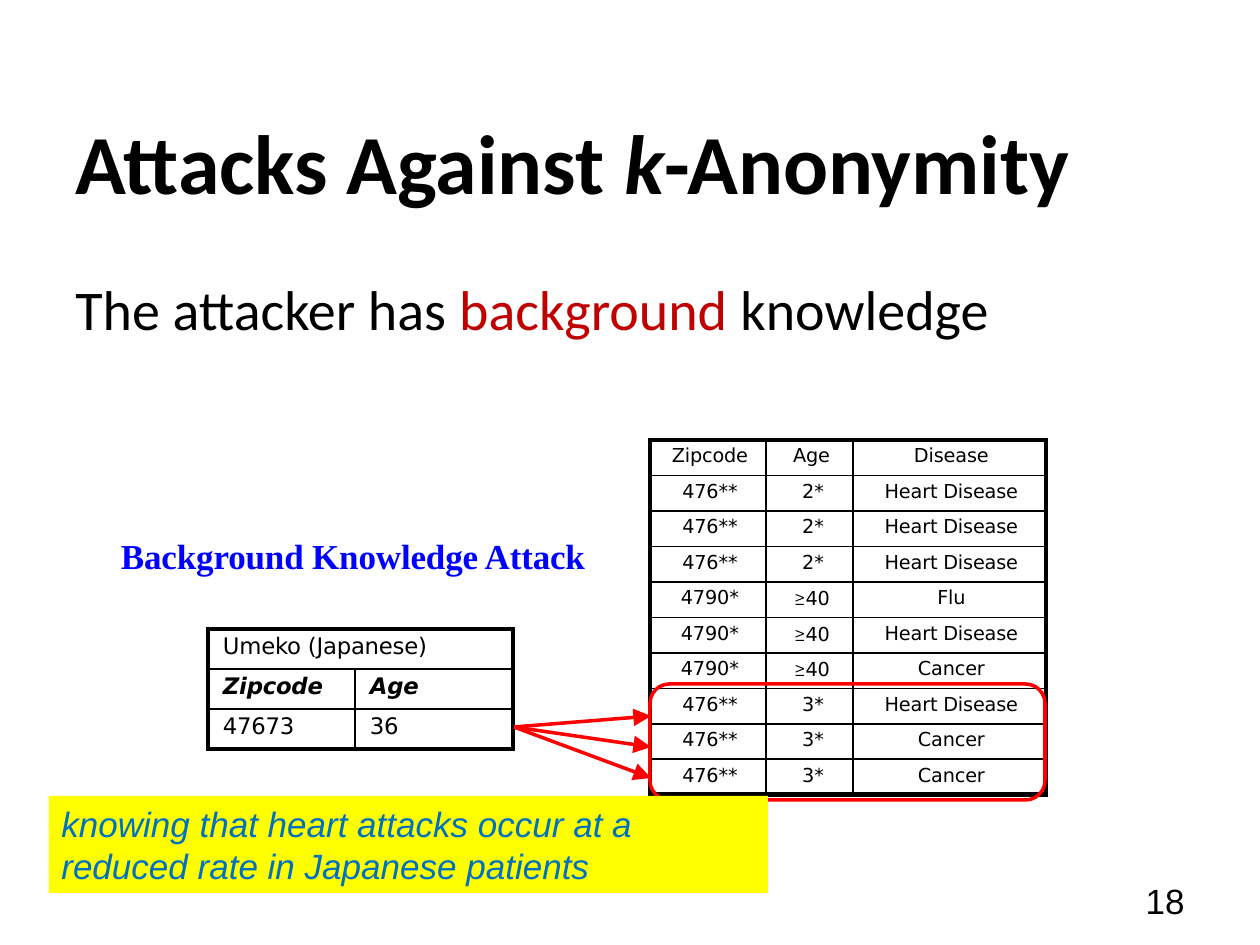
"""Build the slide on background knowledge attacks against k-anonymity."""
from lxml import etree
from pptx import Presentation
from pptx.dml.color import RGBColor
from pptx.enum.shapes import MSO_CONNECTOR, MSO_SHAPE
from pptx.enum.text import MSO_ANCHOR, PP_ALIGN
from pptx.oxml.ns import qn
from pptx.util import Emu, Pt

LEFT, CENTER, RIGHT = PP_ALIGN.LEFT, PP_ALIGN.CENTER, PP_ALIGN.RIGHT
TOP, MIDDLE = MSO_ANCHOR.TOP, MSO_ANCHOR.MIDDLE
STRAIGHT = MSO_CONNECTOR.STRAIGHT
RECT, ROUNDED = MSO_SHAPE.RECTANGLE, MSO_SHAPE.ROUNDED_RECTANGLE
BLACK, RED, BLUE, YELLOW = "000000", "FF0000", "0000FF", "FFFF00"

TITLE = [("Attacks Against ", {}), ("k", {"italic": True}), ("-Anonymity", {})]
BODY = [("The attacker has ", {}), ("background ", {"color": "C00000"}), ("knowledge", {})]
NOTE = "knowing that heart attacks occur at a reduced rate in Japanese patients"

PATIENTS = [
    ("Zipcode", "Age", "Disease"),
    ("476**", "2*", "Heart Disease"),
    ("476**", "2*", "Heart Disease"),
    ("476**", "2*", "Heart Disease"),
    ("4790*", "≥40", "Flu"),
    ("4790*", "≥40", "Heart Disease"),
    ("4790*", "≥40", "Cancer"),
    ("476**", "3*", "Heart Disease"),
    ("476**", "3*", "Cancer"),
    ("476**", "3*", "Cancer"),
]
PATIENT_ROW_LINES = [2.25] + [1] * 7 + [1.5, 1.5, 3]
PATIENT_COL_LINES = [2.25, 1, 1, 2.25]
VICTIM = [("Umeko (Japanese)", ""), ("Zipcode", "Age"), ("47673", "36")]
VICTIM_ROW_LINES = [2.25, 1.5, 1, 2.25]
VICTIM_COL_LINES = [2.25, 1, 2.25]
ARROW_START = (514, 727)
ARROW_ENDS = [(651, 716), (651, 747), (651, 778)]


def px(n):
    return Emu(round(n * 914400 / 126))


def rgb(value):
    return RGBColor.from_string(value)


def write(tf, text, size, font, color=BLACK, bold=False, italic=False, align=LEFT,
          anchor=TOP, before=0, spacing=None, kern=None):
    """Fill a text frame with a string or with (text, overrides) runs."""
    tf.word_wrap = True
    tf.vertical_anchor = anchor
    p = tf.paragraphs[0]
    p.alignment, p.space_before, p.line_spacing = align, Pt(before), spacing
    for part, extra in [(text, {})] if isinstance(text, str) else text:
        r = p.add_run()
        r.text = part
        r.font.size, r.font.bold = Pt(size), bold
        r.font.name = extra.get("font", font)
        r.font.italic = extra.get("italic", italic)
        r.font.color.rgb = rgb(extra.get("color", color))
        if kern is not None:
            r.font._element.set("spc", str(kern))


def add_text(s, box, text, size, font, margins=None, **fmt):
    tf = s.shapes.add_textbox(*map(px, box)).text_frame
    if margins:
        tf.margin_left, tf.margin_top, tf.margin_right, tf.margin_bottom = map(px, margins)
    write(tf, text, size, font, **fmt)


def set_border(cell, side, width):
    ln = etree.SubElement(cell._tc.get_or_add_tcPr(), qn("a:" + side), w=str(Pt(width)))
    fill = etree.SubElement(ln, qn("a:solidFill"))
    etree.SubElement(fill, qn("a:srgbClr"), val=BLACK)


def add_grid(s, box, widths, rows, row_lines, col_lines, style, merge_first=False):
    """Add a ruled table; style(row, column, text) gives side margins and text format."""
    table = s.shapes.add_table(len(rows), len(widths), *map(px, box)).table
    table.first_row = table.horz_banding = False
    for column, width in zip(table.columns, widths):
        column.width = px(width)
    for row in table.rows:
        row.height = px(box[3] / len(rows))
    if merge_first:
        table.cell(0, 0).merge(table.cell(0, len(widths) - 1))
    for i, row in enumerate(rows):
        for j, text in enumerate(row):
            cell = table.cell(i, j)
            if cell.is_spanned:
                continue
            span = cell.span_width if cell.is_merge_origin else 1
            set_border(cell, "lnL", col_lines[j])
            set_border(cell, "lnR", col_lines[j + span])
            set_border(cell, "lnT", row_lines[i])
            set_border(cell, "lnB", row_lines[i + 1])
            cell.fill.background()
            (left, right), fmt = style(i, j, text)
            cell.margin_left, cell.margin_right = px(left), px(right)
            cell.margin_top, cell.margin_bottom = px(5), 0
            if text.startswith("≥"):
                text = [("≥", {"font": "Montserrat"}), (text[1:], {})]
            write(cell.text_frame, text, font="DejaVu Sans", before=3, kern=-10, **fmt)


def patient_style(i, j, text):
    if j == 1:
        return (0, 29 if text.endswith("*") else 23), {"size": 11, "align": RIGHT}
    return (4, 0), {"size": 11, "align": CENTER}


def victim_style(i, j, text):
    return (15, 0), {"size": 13, "bold": i == 1, "italic": i == 1}


def add_arrow(s, start, end):
    line = s.shapes.add_connector(STRAIGHT, *map(px, start + end))
    line.line.color.rgb = rgb(RED)
    line.line.width = Pt(2)
    etree.SubElement(line.line._get_or_add_ln(), qn("a:tailEnd"),
                     type="triangle", w="lg", len="lg")
    etree.SubElement(line._element.spPr, qn("a:effectLst"))


def add_box(s, kind, box, fill=None, outline=None):
    sp = s.shapes.add_shape(kind, *map(px, box))
    sp.shadow.inherit = False
    if fill:
        sp.fill.solid()
        sp.fill.fore_color.rgb = rgb(fill)
    else:
        sp.fill.background()
    if outline:
        sp.line.color.rgb = rgb(outline)
        sp.line.width = Pt(2)
    else:
        sp.line.fill.background()
    return sp


def main():
    prs = Presentation()
    prs.slide_width, prs.slide_height = px(1260), px(945)
    s = prs.slides.add_slide(prs.slide_layouts[5])
    title = s.shapes.title
    title.left, title.top, title.width, title.height = map(px, (63, 82, 1134, 158))
    write(title.text_frame, TITLE, 48, "Calibri", bold=True, anchor=MIDDLE)
    add_text(s, (903, 876, 294, 50), "18", 20, "Arial", align=RIGHT, anchor=MIDDLE)
    add_text(s, (63, 268, 1173, 582), BODY, 32, "Calibri", before=20)
    add_grid(s, (650, 440, 396, 355), (116, 87, 193), PATIENTS,
             PATIENT_ROW_LINES, PATIENT_COL_LINES, patient_style)
    add_grid(s, (208, 629, 305, 120), (147, 158), VICTIM,
             VICTIM_ROW_LINES, VICTIM_COL_LINES, victim_style, merge_first=True)
    for end in ARROW_ENDS:
        add_arrow(s, ARROW_START, end)
    add_box(s, ROUNDED, (650, 684, 395, 116), outline=RED)
    add_text(s, (120, 525, 481, 48), "Background Knowledge Attack", 20, "Times New Roman",
             margins=(1, 1, 0, 0), color=BLUE, bold=True, before=1, spacing=1.2, kern=-10)
    note = add_box(s, RECT, (49, 796, 719, 97), fill=YELLOW)
    write(note.text_frame, NOTE, 20, "Arial", color="0070C0", italic=True)
    prs.save("out.pptx")


if __name__ == "__main__":
    main()
